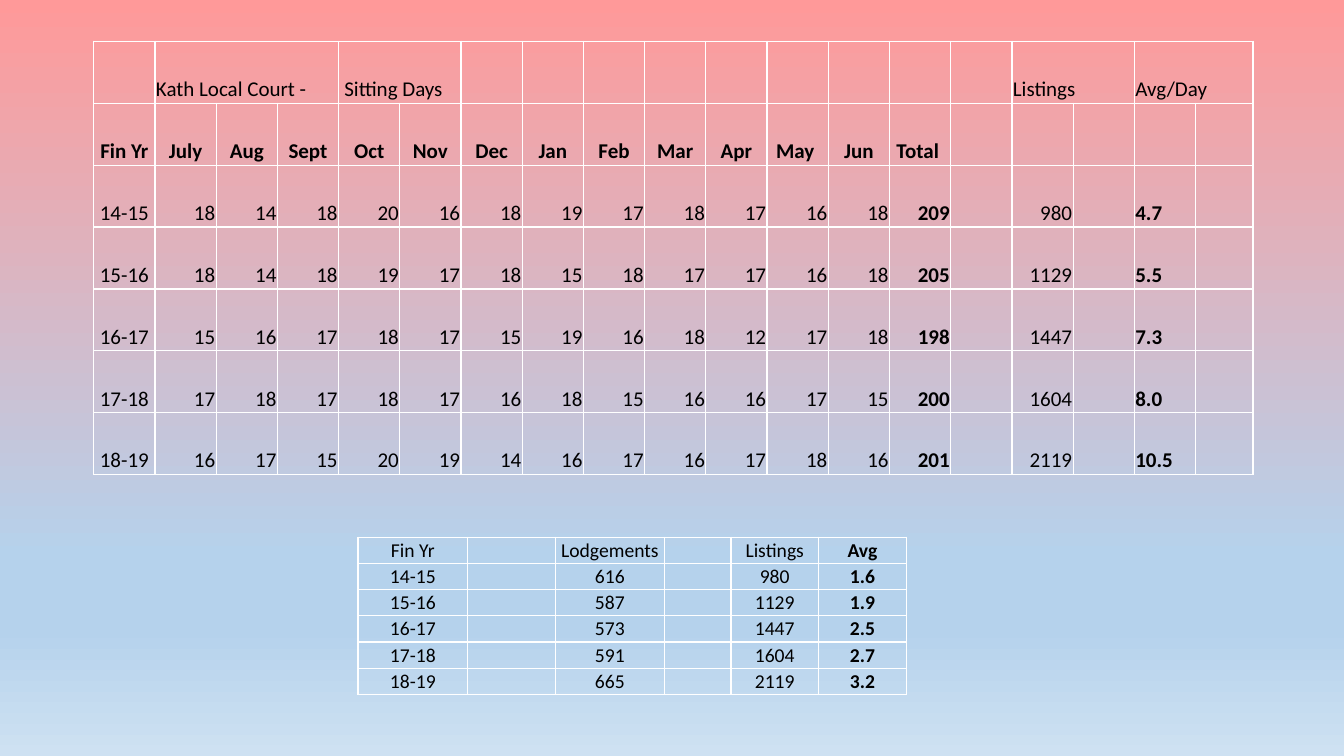
from copy import deepcopy
from dataclasses import dataclass, field

from lxml import etree
from pptx import Presentation
from pptx.dml.color import RGBColor
from pptx.enum.text import MSO_ANCHOR, PP_ALIGN
from pptx.oxml.ns import qn
from pptx.slide import Slide
from pptx.table import _Cell
from pptx.util import Inches, Pt

LEFT, CENTER, RIGHT = PP_ALIGN.LEFT, PP_ALIGN.CENTER, PP_ALIGN.RIGHT
BOTTOM = MSO_ANCHOR.BOTTOM

FONT = "Calibri"
COLORS = {"text": "000000", "border": "FFFFFF",
          "coral": "FF9999", "sky": "B5D2EC", "pale": "CEE1F2"}
GRADIENT = [(0, "coral"), (0.74, "sky"), (0.83, "sky"), (1, "pale")]
MARGIN = Inches(0.01)
BORDER_WIDTH = Pt(1)


@dataclass
class YearRecord:
    name: str
    sitting_days: list[int]
    lodgements: int
    listings: int


@dataclass
class CellText:
    text: str = ""
    align: PP_ALIGN = CENTER
    bold: bool = False
    span: int = 1


@dataclass
class TableSpec:
    left: float
    top: float
    widths: list[float]
    row_height: float
    size: int
    rows: list[list[CellText]] = field(default_factory=list)


MONTHS = ["July", "Aug", "Sept", "Oct", "Nov", "Dec",
          "Jan", "Feb", "Mar", "Apr", "May ", "Jun"]
YEARS = [
    YearRecord("14-15", [18, 14, 18, 20, 16, 18, 19, 17, 18, 17, 16, 18], 616, 980),
    YearRecord("15-16", [18, 14, 18, 19, 17, 18, 15, 18, 17, 17, 16, 18], 587, 1129),
    YearRecord("16-17", [15, 16, 17, 18, 17, 15, 19, 16, 18, 12, 17, 18], 573, 1447),
    YearRecord("17-18", [17, 18, 17, 18, 17, 16, 18, 15, 16, 16, 17, 15], 591, 1604),
    YearRecord("18-19", [16, 17, 15, 20, 19, 14, 16, 17, 16, 17, 18, 16], 665, 2119),
]


def sitting_rows() -> list[list[CellText]]:
    """Days per month, yearly total, listings and listings per sitting day."""
    blank = CellText()
    banner = [blank, CellText("Kath Local Court -", LEFT, span=3),
              CellText(" Sitting Days", LEFT, span=2), *[blank] * 9,
              CellText("Listings", LEFT, span=2), CellText("Avg/Day", LEFT, span=2)]
    header = [CellText(name, bold=True) for name in ["Fin Yr", *MONTHS, "Total "]]
    rows = [banner, header + [blank] * 5]
    for year in YEARS:
        total = sum(year.sitting_days)
        rows.append([
            CellText(year.name),
            *[CellText(str(days), RIGHT) for days in year.sitting_days],
            CellText(str(total), RIGHT, bold=True), blank,
            CellText(str(year.listings), RIGHT), blank,
            CellText(f"{year.listings / total:.1f}", LEFT, bold=True), blank,
        ])
    return rows


def lodgement_rows() -> list[list[CellText]]:
    """Listings per lodgement for each year."""
    lines = [("Fin Yr", "Lodgements", "Listings", "Avg")]
    lines += [(year.name, str(year.lodgements), str(year.listings),
               f"{year.listings / year.lodgements:.1f}") for year in YEARS]
    return [[CellText(name), CellText(), CellText(lodgements), CellText(),
             CellText(listings), CellText(average, bold=True)]
            for name, lodgements, listings, average in lines]


def format_cell(cell: _Cell) -> None:
    cell.margin_left = cell.margin_right = MARGIN
    cell.margin_top = cell.margin_bottom = MARGIN
    cell.vertical_anchor = BOTTOM
    properties = cell._tc.get_or_add_tcPr()
    for side in ("a:lnL", "a:lnR", "a:lnT", "a:lnB"):
        line = etree.SubElement(properties, qn(side), w=str(BORDER_WIDTH))
        solid = etree.SubElement(line, qn("a:solidFill"))
        etree.SubElement(solid, qn("a:srgbClr"), val=COLORS["border"])
    cell.fill.background()


def write_cell(cell: _Cell, content: CellText, size: int) -> None:
    para = cell.text_frame.paragraphs[0]
    para.alignment = content.align
    para.font.name = FONT
    para.font.size = Pt(size)
    para.font.bold = content.bold
    para.font.color.rgb = RGBColor.from_string(COLORS["text"])
    if content.text:
        para.add_run().text = content.text
    else:
        # An empty line takes its height from the end-of-paragraph size
        para._p.get_or_add_endParaRPr().set("sz", str(size * 100))


def draw_table(page: Slide, spec: TableSpec) -> None:
    frame = page.shapes.add_table(
        len(spec.rows), len(spec.widths), Inches(spec.left), Inches(spec.top),
        Inches(sum(spec.widths)), Inches(spec.row_height * len(spec.rows)))
    table = frame.table
    table.first_row = table.horz_banding = False
    for column, width in zip(table.columns, spec.widths):
        column.width = Inches(width)
    for row in table.rows:
        row.height = Inches(spec.row_height)
    for cell in table.iter_cells():
        format_cell(cell)
    for row_index, contents in enumerate(spec.rows):
        column_index = 0
        for content in contents:
            cell = table.cell(row_index, column_index)
            column_index += content.span
            if content.span > 1:
                cell.merge(table.cell(row_index, column_index - 1))
            write_cell(cell, content, spec.size)


def paint_background(page: Slide) -> None:
    fill = page.background.fill
    fill.gradient()
    fill.gradient_angle = 270
    stop_list = page.element.find(".//" + qn("a:gsLst"))
    stop_list.extend(deepcopy(list(stop_list)))
    for stop, (position, color) in zip(fill.gradient_stops, GRADIENT):
        stop.position = position
        stop.color.rgb = RGBColor.from_string(COLORS[color])


def main() -> None:
    deck = Presentation()
    deck.slide_width, deck.slide_height = Inches(13.33), Inches(7.5)
    page = deck.slides.add_slide(deck.slide_layouts[6])
    paint_background(page)

    # Sitting days: equal columns with a slightly narrower last one
    total_width, last_width, equal_columns = 11.5, 0.57, 18
    equal_width = (total_width - last_width) / equal_columns
    draw_table(page, TableSpec(0.93, 0.41, [equal_width] * equal_columns + [last_width],
                               4.3 / 7, 15, sitting_rows()))

    # Lodgements against listings
    draw_table(page, TableSpec(3.55, 5.33, [1.09, 0.87, 1.08, 0.66, 0.87, 0.87],
                               0.26, 14, lodgement_rows()))
    deck.save("out.pptx")


if __name__ == "__main__":
    main()
